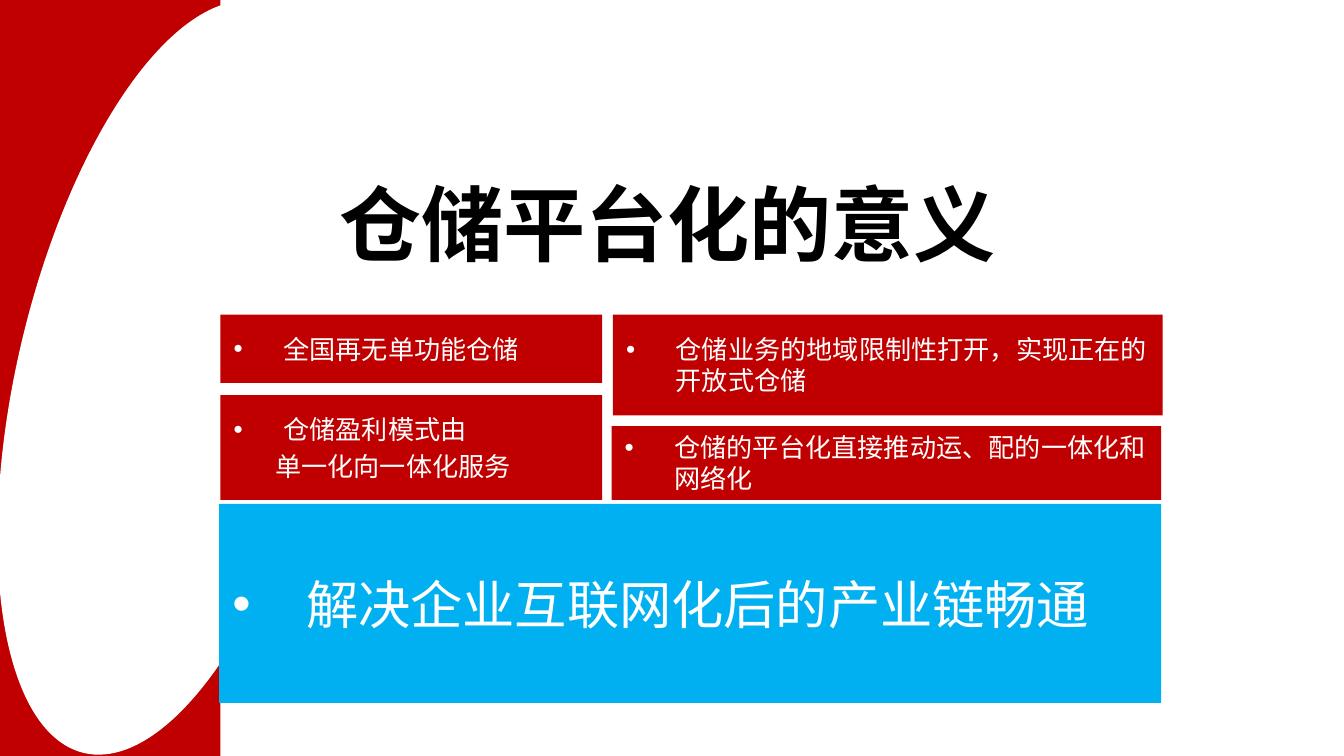
"""Build the slide on why warehouses become platforms."""
from lxml.etree import SubElement
from pptx import Presentation
from pptx.dml.color import RGBColor
from pptx.enum.shapes import MSO_SHAPE
from pptx.enum.text import MSO_ANCHOR, PP_ALIGN
from pptx.oxml.ns import qn
from pptx.util import Inches, Pt

FONT = "Noto Sans CJK SC"
COLORS = {"red": "C00000", "blue": "00B0F0", "white": "FFFFFF", "black": "000000"}
WIDTH = 10
HEIGHT = WIDTH * 9 / 16
HANGING = 0.37
LINE_HEIGHT = 1.19

MEANINGS = [
    ((1.64, 2.34, 2.84, 0.51), ["全国再无单功能仓储"]),
    ((4.56, 2.34, 4.09, 0.75), ["仓储业务的地域限制性打开，实现正在的开放式仓储"]),
    ((1.64, 2.94, 2.84, 0.78), ["仓储盈利模式由", "单一化向一体化服务"]),
    ((4.55, 3.17, 4.09, 0.55), ["仓储的平台化直接推动运、配的一体化和网络化"]),
]


def add_block(slide, place, color, kind=MSO_SHAPE.RECTANGLE, rotation=0):
    """Add a plain filled shape without outline or shadow."""
    block = slide.shapes.add_shape(kind, *map(Inches, place))
    block.shadow.inherit = False
    block.fill.solid()
    block.fill.fore_color.rgb = RGBColor.from_string(COLORS[color])
    block.line.fill.background()
    block.rotation = rotation
    return block


def write(paragraph, text, size, color="white", bold=False, align=PP_ALIGN.LEFT):
    """Write one formatted run into a paragraph."""
    paragraph.alignment = align
    paragraph.line_spacing = Pt(round(LINE_HEIGHT * size, 1))
    run = paragraph.add_run()
    run.text = text
    run.font.name = FONT
    run.font.size = Pt(size)
    run.font.bold = bold
    run.font.color.rgb = RGBColor.from_string(COLORS[color])
    SubElement(run.font._element, qn("a:ea"), typeface=FONT)


def indent(paragraph, left, first=0, bullet=False):
    """Set the indents of a paragraph and give it a bullet if asked."""
    properties = paragraph._p.get_or_add_pPr()
    properties.set("marL", str(Inches(left)))
    properties.set("indent", str(Inches(first)))
    if bullet:
        SubElement(properties, qn("a:buFont"), typeface="Arial")
        SubElement(properties, qn("a:buChar"), char="•")


def add_card(slide, place, lines, color="red", size=14, hanging=HANGING):
    """Add a filled card with a bulleted line and indented lines below it."""
    frame = add_block(slide, place, color).text_frame
    frame.word_wrap = True
    frame.vertical_anchor = MSO_ANCHOR.MIDDLE
    for number, line in enumerate(lines):
        paragraph = frame.add_paragraph() if number else frame.paragraphs[0]
        if number:
            indent(paragraph, 0.31)
            paragraph.space_before = Pt(0.2 * size)
        else:
            indent(paragraph, hanging, -hanging, bullet=True)
        write(paragraph, line, size)


def add_title(slide, text):
    """Add the centred slide title."""
    frame = slide.shapes.add_textbox(*map(Inches, (0.47, 1.25, 9, 0.94))).text_frame
    frame.word_wrap = True
    frame.vertical_anchor = MSO_ANCHOR.TOP
    write(frame.paragraphs[0], text, 44, color="black", bold=True, align=PP_ALIGN.CENTER)


def main():
    """Build and save the slide."""
    deck = Presentation()
    deck.slide_width, deck.slide_height = Inches(WIDTH), Inches(HEIGHT)
    slide = deck.slides.add_slide(deck.slide_layouts[6])
    add_block(slide, (0, 0, 4.76, HEIGHT), "red")
    add_block(slide, (0.13, -0.06, 2.31, 5.74), "white", MSO_SHAPE.OVAL, 13.3)
    add_block(slide, (1.64, 0, 8.36, HEIGHT), "white")
    add_title(slide, "仓储平台化的意义")
    add_card(slide, (1.63, 3.75, 7.01, 1.48), ["解决企业互联网化后的产业链畅通"],
             color="blue", size=28, hanging=0.55)
    for place, lines in MEANINGS:
        add_card(slide, place, lines)
    deck.save("out.pptx")


if __name__ == "__main__":
    main()
